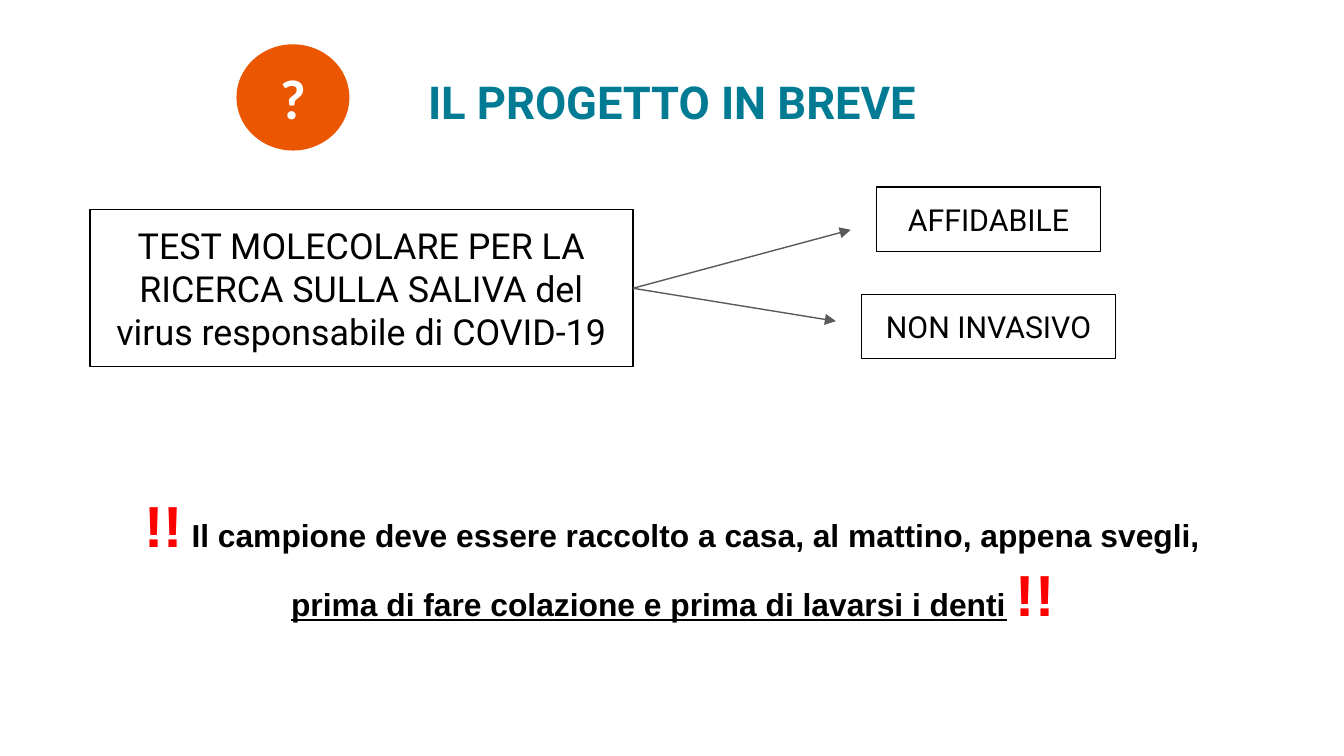
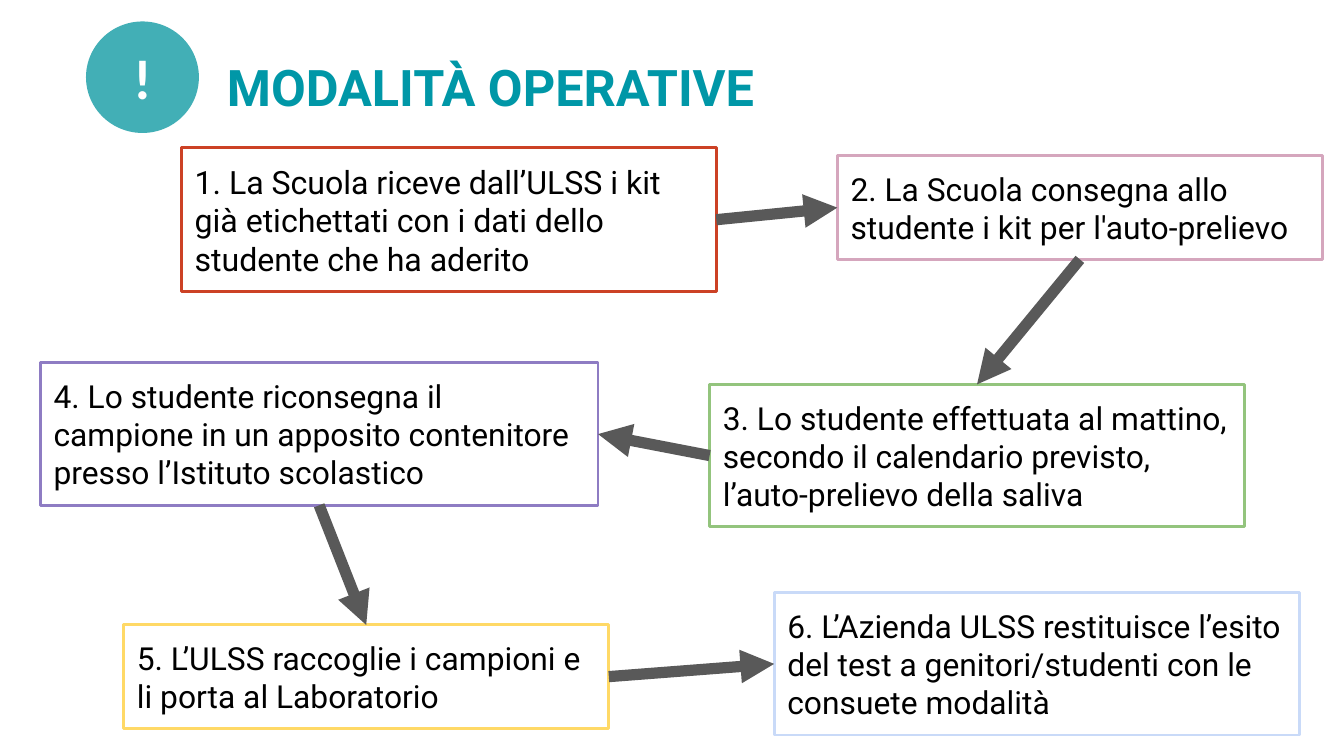
from dataclasses import dataclass
from typing import Optional

from lxml import etree
from pptx import Presentation
from pptx.dml.color import RGBColor
from pptx.enum.shapes import MSO_CONNECTOR, MSO_SHAPE
from pptx.enum.text import MSO_ANCHOR, MSO_AUTO_SIZE, PP_ALIGN
from pptx.oxml.ns import qn
from pptx.util import Centipoints, Emu, Pt

RECTANGLE, OVAL = MSO_SHAPE.RECTANGLE, MSO_SHAPE.OVAL
STRAIGHT = MSO_CONNECTOR.STRAIGHT
TOP, MIDDLE, BOTTOM = MSO_ANCHOR.TOP, MSO_ANCHOR.MIDDLE, MSO_ANCHOR.BOTTOM
LEFT, CENTER, JUSTIFY = PP_ALIGN.LEFT, PP_ALIGN.CENTER, PP_ALIGN.JUSTIFY
GROW, FIXED = MSO_AUTO_SIZE.SHAPE_TO_FIT_TEXT, MSO_AUTO_SIZE.NONE
TOP_SITE, LEFT_SITE, BOTTOM_SITE, RIGHT_SITE = range(4)

EMU_PER_PX = 9144
SLIDE_WIDTH = 1000
COLORS = {
    "white": "FFFFFF",
    "black": "000000",
    "alert": "FF0000",
    "arrow": "595959",
    "brief_title": "017B93",
    "steps_title": "0097A7",
    "question": "EB5600",
    "exclamation": "42AFB6",
    "red": "CC4125",
    "pink": "D5A6BD",
    "green": "93C47D",
    "violet": "8E7CC3",
    "yellow": "FFD966",
    "blue": "C9DAF8",
}


@dataclass(frozen=True)
class Area:
    left: int
    top: int
    width: int
    height: int


@dataclass(frozen=True)
class TextRun:
    text: str
    size: float
    color: str = "black"
    font: str = "Roboto"
    bold: bool = False
    underline: bool = False


@dataclass(frozen=True)
class TextStyle:
    align: PP_ALIGN = LEFT
    anchor: MSO_ANCHOR = MIDDLE
    fit: MSO_AUTO_SIZE = GROW
    spacing: Optional[float] = None
    margin_x: int = 10
    margin_y: int = 10


@dataclass(frozen=True)
class Box:
    area: Area
    text: str
    size: float
    line_color: str = "black"
    line_width: float = 0.75
    align: PP_ALIGN = CENTER
    fill: Optional[str] = None


BADGE_STYLE = TextStyle(CENTER, fit=FIXED, margin_x=7, margin_y=4)
PROJECT = Box(
    Area(67, 156, 404, 117),
    "TEST MOLECOLARE PER LA RICERCA SULLA SALIVA del virus responsabile di COVID-19",
    19.2,
)
QUALITIES = [
    (Box(Area(652, 139, 167, 48), "AFFIDABILE", 16.2), (633, 171)),
    (Box(Area(641, 219, 189, 48), "NON INVASIVO", 16.2), (622, 239)),
]
MARK = TextRun("!!", 31, "alert", "Arial", True)
NOTICE = [
    [
        MARK,
        TextRun(
            " Il campione deve essere raccolto a casa, al mattino, appena svegli,",
            17, font="Arial", bold=True,
        ),
    ],
    [
        TextRun(
            "prima di fare colazione e prima di lavarsi i denti",
            17, font="Arial", bold=True, underline=True,
        ),
        TextRun(" ", 17, font="Arial", bold=True),
        MARK,
    ],
]
STEPS = [
    Box(
        Area(135, 110, 398, 107),
        "1. La Scuola riceve dall’ULSS i kit già etichettati con i dati dello studente che ha aderito",
        17.2, "red", 1.5, LEFT, "white",
    ),
    Box(
        Area(623, 116, 361, 77),
        "2. La Scuola consegna allo studente i kit per l'auto-prelievo",
        17, "pink", 1.5, LEFT,
    ),
    Box(
        Area(528, 286, 398, 106),
        "3. Lo studente effettuata al mattino, secondo il calendario previsto, l’auto-prelievo della saliva",
        17, "green", 1.5, LEFT,
    ),
    Box(
        Area(30, 270, 415, 106),
        "4. Lo studente riconsegna il campione in un apposito contenitore presso l’Istituto scolastico",
        17, "violet", 1.5, LEFT,
    ),
    Box(
        Area(92, 465, 361, 77),
        "5. L’ULSS raccoglie i campioni e li porta al Laboratorio",
        17, "yellow", 1.5, LEFT,
    ),
    Box(
        Area(576, 441, 391, 106),
        "6. L’Azienda ULSS restituisce l’esito del test a genitori/studenti con le consuete modalità",
        17, "blue", 1.5, LEFT,
    ),
]
STEP_LINKS = [
    (RIGHT_SITE, LEFT_SITE),
    (BOTTOM_SITE, TOP_SITE),
    (LEFT_SITE, RIGHT_SITE),
    (BOTTOM_SITE, TOP_SITE),
    (RIGHT_SITE, LEFT_SITE),
]


def px(length: int) -> Emu:
    return Emu(length * EMU_PER_PX)


def rgb(name: str) -> RGBColor:
    return RGBColor.from_string(COLORS[name])


def bounds(area: Area) -> tuple:
    return px(area.left), px(area.top), px(area.width), px(area.height)


def write_text(shape, paragraphs: list, style: TextStyle) -> None:
    frame = shape.text_frame
    frame.word_wrap = True
    frame.auto_size = style.fit
    frame.vertical_anchor = style.anchor
    frame.margin_left = frame.margin_right = px(style.margin_x)
    frame.margin_top = frame.margin_bottom = px(style.margin_y)
    for index, text_runs in enumerate(paragraphs):
        paragraph = frame.add_paragraph() if index else frame.paragraphs[0]
        paragraph.alignment = style.align
        if style.spacing:
            paragraph.line_spacing = style.spacing
        for text_run in text_runs:
            run = paragraph.add_run()
            run.text = text_run.text
            run.font.name = text_run.font
            run.font.size = Centipoints(round(text_run.size * 100))
            run.font.bold = text_run.bold
            run.font.underline = text_run.underline
            run.font.color.rgb = rgb(text_run.color)


def add_text(slide, area: Area, paragraphs: list, style: TextStyle) -> None:
    write_text(slide.shapes.add_textbox(*bounds(area)), paragraphs, style)


def add_title(slide, area: Area, text: str, size: float, color: str,
              style: TextStyle) -> None:
    add_text(slide, area, [[TextRun(text, size, color, bold=True)]], style)


def add_badge(slide, area: Area, symbol: str, color: str) -> None:
    badge = slide.shapes.add_shape(OVAL, *bounds(area))
    badge.shadow.inherit = False
    badge.fill.solid()
    badge.fill.fore_color.rgb = rgb(color)
    badge.line.fill.background()
    write_text(badge, [[TextRun(symbol, 30, "white", "Calibri", True)]], BADGE_STYLE)


def add_box(slide, box: Box):
    shape = slide.shapes.add_shape(RECTANGLE, *bounds(box.area))
    shape.shadow.inherit = False
    if box.fill:
        shape.fill.solid()
        shape.fill.fore_color.rgb = rgb(box.fill)
    else:
        shape.fill.background()
    shape.line.color.rgb = rgb(box.line_color)
    shape.line.width = Pt(box.line_width)
    write_text(shape, [[TextRun(box.text, box.size)]], TextStyle(box.align))
    return shape


def add_arrow(slide, source, source_site: int, end: tuple, width: float):
    arrow = slide.shapes.add_connector(STRAIGHT, 0, 0, px(end[0]), px(end[1]))
    arrow.begin_connect(source, source_site)
    arrow.line.color.rgb = rgb("arrow")
    arrow.line.width = Pt(width)
    line = arrow._element.spPr.find(qn("a:ln"))
    etree.SubElement(line, qn("a:tailEnd"), type="triangle")
    etree.SubElement(arrow._element.spPr, qn("a:effectLst"))
    return arrow


def build_brief(slide) -> None:
    add_title(slide, Area(34, 38, 932, 68), "IL PROGETTO IN BREVE", 24.3,
              "brief_title", TextStyle(CENTER, BOTTOM, FIXED, 1.15))
    project = add_box(slide, PROJECT)
    for quality, arrow_end in QUALITIES:
        add_arrow(slide, project, RIGHT_SITE, arrow_end, 0.75)
        add_box(slide, quality)
    add_text(slide, Area(86, 354, 829, 125), NOTICE, TextStyle(CENTER, TOP))
    add_badge(slide, Area(176, 33, 84, 79), "?", "question")


def build_steps(slide) -> None:
    add_title(slide, Area(159, 25, 816, 66), "MODALITÀ OPERATIVE", 27,
              "steps_title", TextStyle(JUSTIFY, TOP, spacing=1.15))
    add_badge(slide, Area(64, 16, 84, 83), "!", "exclamation")
    shapes = [add_box(slide, step) for step in STEPS]
    for source, target, sites in zip(shapes, shapes[1:], STEP_LINKS):
        arrow = add_arrow(slide, source, sites[0], (0, 0), 6)
        arrow.end_connect(target, sites[1])


def main() -> None:
    presentation = Presentation()
    presentation.slide_width = px(SLIDE_WIDTH)
    presentation.slide_height = Emu(px(SLIDE_WIDTH) * 9 // 16)
    blank_layout = presentation.slide_layouts[6]
    for build in (build_brief, build_steps):
        build(presentation.slides.add_slide(blank_layout))
    presentation.save("out.pptx")


if __name__ == "__main__":
    main()
